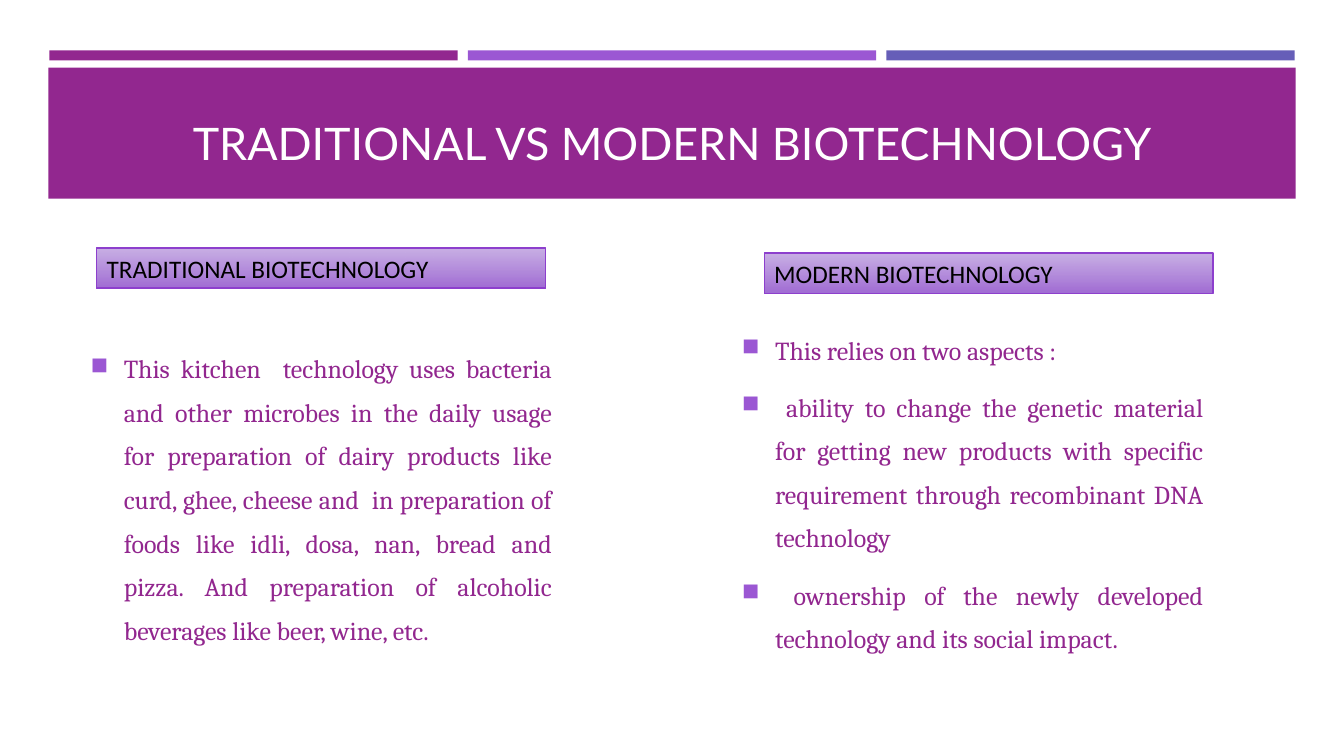
from dataclasses import dataclass

from lxml import etree
from pptx import Presentation
from pptx.dml.color import RGBColor
from pptx.enum.shapes import MSO_SHAPE
from pptx.enum.text import MSO_ANCHOR, PP_ALIGN
from pptx.oxml.ns import qn
from pptx.util import Inches, Pt

RECTANGLE = MSO_SHAPE.RECTANGLE
BOTTOM, MIDDLE, TOP = MSO_ANCHOR.BOTTOM, MSO_ANCHOR.MIDDLE, MSO_ANCHOR.TOP
LEFT, CENTER, JUSTIFY = PP_ALIGN.LEFT, PP_ALIGN.CENTER, PP_ALIGN.JUSTIFY


@dataclass(frozen=True)
class Theme:
    plum: str = "92278F"
    violet: str = "9B57D3"
    indigo: str = "665EB8"
    white: str = "FFFFFF"
    black: str = "000000"
    label_top: str = "C3A7E2"
    label_bottom: str = "A06BD4"
    label_line: str = "8D3FCD"
    title_size: float = 32
    label_size: float = 18
    body_size: float = 18.5


theme = Theme()

presentation = Presentation()
presentation.slide_width = Inches(13.33)
presentation.slide_height = Inches(7.5)
slide = presentation.slides.add_slide(presentation.slide_layouts[6])


def add_rectangle(left, top, width, height, color):
    shape = slide.shapes.add_shape(
        RECTANGLE, Inches(left), Inches(top), Inches(width), Inches(height))
    shape.shadow.inherit = False
    shape.fill.solid()
    shape.fill.fore_color.rgb = RGBColor.from_string(color)
    shape.line.fill.background()
    return shape


def write_text(shape, paragraphs, font, size, color, align=LEFT, anchor=TOP, bullet=None):
    frame = shape.text_frame
    frame.word_wrap = True
    frame.vertical_anchor = anchor
    for index, text in enumerate(paragraphs):
        paragraph = frame.add_paragraph() if index else frame.paragraphs[0]
        paragraph.alignment = align
        run = paragraph.add_run()
        run.text = text
        run.font.name = font
        run.font.size = Pt(size)
        run.font.color.rgb = RGBColor.from_string(color)
        if bullet:
            paragraph.line_spacing = 1.4
            paragraph.space_before = Pt(size * 0.2)
            paragraph.space_after = Pt(6)
            properties = paragraph._p.get_or_add_pPr()
            properties.set("marL", str(Inches(0.33)))
            properties.set("indent", str(-Inches(0.33)))
            bullet_color = etree.SubElement(properties, qn("a:buClr"))
            etree.SubElement(bullet_color, qn("a:srgbClr"), val=bullet)
            etree.SubElement(properties, qn("a:buSzPct"), val="92000")
            etree.SubElement(properties, qn("a:buChar"), char="■")


# Three accent bars above the title band
for index, color in enumerate((theme.plum, theme.violet, theme.indigo)):
    add_rectangle(0.49 + index * 4.15, 0.5, 4.05, 0.1, color)

# Title
add_rectangle(0.48, 0.67, 12.37, 1.3, theme.plum)
title = slide.shapes.add_textbox(Inches(0.64), Inches(0.77), Inches(12.06), Inches(0.96))
write_text(title, ["TRADITIONAL VS MODERN BIOTECHNOLOGY"], "Lato", theme.title_size,
           theme.white, align=CENTER, anchor=BOTTOM)

# Two columns: label position, body position, heading, bullets
columns = [
    (0.96, 2.46, 0.8, 3.05, "TRADITIONAL BIOTECHNOLOGY", [
        "This kitchen  technology uses bacteria and other microbes in the daily usage "
        "for preparation of dairy products like curd, ghee, cheese and  in preparation "
        "of foods like idli, dosa, nan, bread and pizza. And preparation of alcoholic "
        "beverages like beer, wine, etc. ",
    ]),
    (7.58, 2.51, 7.26, 3, "MODERN BIOTECHNOLOGY", [
        "This relies on two aspects :",
        " ability to change the genetic material for getting new products with specific "
        "requirement through recombinant DNA technology",
        " ownership of the newly developed technology and its social impact. ",
    ]),
]
for label_left, label_top, body_left, body_top, heading, bullets in columns:
    body = slide.shapes.add_textbox(
        Inches(body_left), Inches(body_top), Inches(4.77), Inches(3.68))
    write_text(body, bullets, "Cambria", theme.body_size, theme.plum,
               align=JUSTIFY, anchor=MIDDLE, bullet=theme.violet)

    # Gradient label, slightly transparent at its top
    label = add_rectangle(label_left, label_top, 4.45, 0.4, theme.label_bottom)
    label.fill.gradient()
    label.fill.gradient_angle = 270
    for stop, color in zip(label.fill.gradient_stops, (theme.label_top, theme.label_bottom)):
        stop.color.rgb = RGBColor.from_string(color)
    top_color = next(label._element.spPr.iter(qn("a:srgbClr")))
    etree.SubElement(top_color, qn("a:alpha"), val="90000")
    label.line.color.rgb = RGBColor.from_string(theme.label_line)
    label.line.width = Pt(1)
    write_text(label, [heading], "Calibri", theme.label_size, theme.black)

presentation.save("out.pptx")
